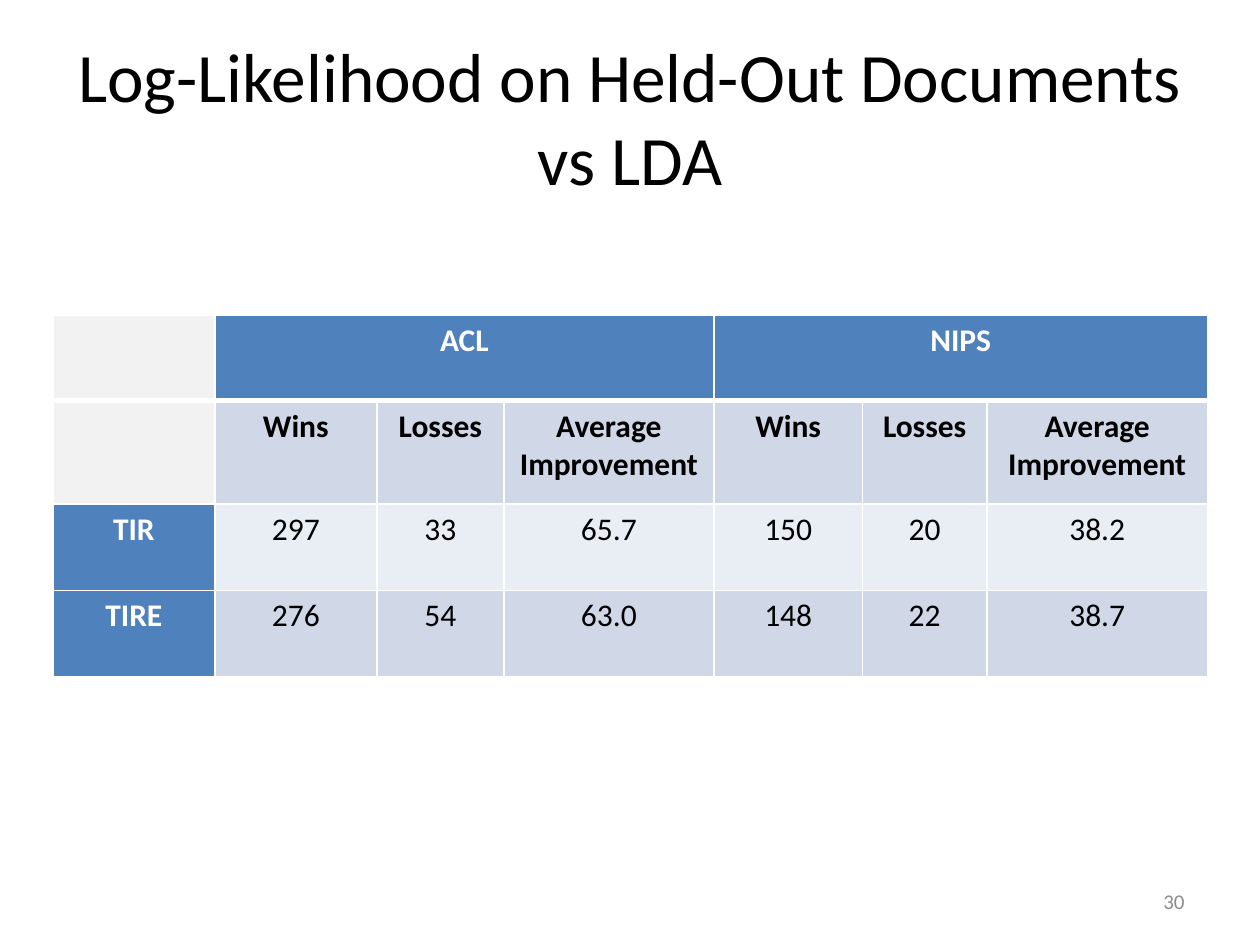
from lxml.etree import SubElement
from pptx import Presentation
from pptx.dml.color import RGBColor
from pptx.enum.text import MSO_ANCHOR as Anchor, PP_ALIGN as Align
from pptx.oxml.ns import qn
from pptx.util import Pt

BLACK, WHITE, GREY = "000000", "FFFFFF", "8C8C8C"
BLUE, BLANK, DARK_BAND, LIGHT_BAND = "4F81BD", "F2F2F2", "D0D8E8", "E9EDF4"

COLUMN_WIDTHS = [92.6, 92.6, 72.6, 120, 85, 71, 126.2]
ROW_HEIGHTS = [49, 59, 49.5, 49.5]
MEASURES = ["Wins", "Losses", "Average\nImprovement"]
RESULTS = [
    ["", "ACL", "", "", "NIPS", "", ""],
    ["", *MEASURES, *MEASURES],
    ["TIR", "297", "33", "65.7", "150", "20", "38.2"],
    ["TIRE", "276", "54", "63.0", "148", "22", "38.7"],
]


def rgb(color):
    return RGBColor.from_string(color)


def write(frame, text, size, color, align=Align.CENTER, bold=False):
    frame.text = text
    for paragraph in frame.paragraphs:
        paragraph.alignment = align
        font = paragraph.font
        font.name, font.size, font.bold = "Calibri", Pt(size), bold
        font.color.rgb = rgb(color)


def add_border(cell, side, width):
    line = SubElement(cell._tc.get_or_add_tcPr(), qn(f"a:ln{side}"), w=str(Pt(width)))
    fill = SubElement(line, qn("a:solidFill"))
    SubElement(fill, qn("a:srgbClr"), val=WHITE)


def cell_style(row, column):
    if column == 0 and row < 2:
        return BLANK, BLACK, False
    if column == 0 or row == 0:
        return BLUE, WHITE, True
    return (LIGHT_BAND if row == 2 else DARK_BAND), BLACK, row == 1


def add_results_table(slide):
    results = slide.shapes.add_table(
        len(ROW_HEIGHTS), len(COLUMN_WIDTHS),
        Pt(30.2), Pt(180), Pt(sum(COLUMN_WIDTHS)), Pt(sum(ROW_HEIGHTS)),
    ).table
    for column, width in zip(results.columns, COLUMN_WIDTHS):
        column.width = Pt(width)
    for row, height in zip(results.rows, ROW_HEIGHTS):
        row.height = Pt(height)
    for row, values in enumerate(RESULTS):
        for column, value in enumerate(values):
            cell = results.cell(row, column)
            fill, color, bold = cell_style(row, column)
            write(cell.text_frame, value, 18, color, bold=bold)
            for side in "LRTB":
                below_header = (row, side) in [(0, "B"), (1, "T")]
                add_border(cell, side, 3 if below_header else 1)
            cell.fill.solid()
            cell.fill.fore_color.rgb = rgb(fill)
    for first in (1, 4):
        results.cell(0, first).merge(results.cell(0, first + 2))


def set_title(slide, text):
    title = slide.shapes.title
    title.left, title.top, title.width, title.height = Pt(36), Pt(21.6), Pt(648), Pt(90)
    title.text_frame.vertical_anchor = Anchor.MIDDLE
    write(title.text_frame, text, 39.6, BLACK)


def add_page_number(slide, number):
    page = slide.shapes.add_textbox(Pt(516), Pt(500.4), Pt(168), Pt(28.8)).text_frame
    page.word_wrap = True
    page.vertical_anchor = Anchor.MIDDLE
    write(page, number, 12, GREY, Align.RIGHT)


def main():
    deck = Presentation()
    deck.slide_width, deck.slide_height = Pt(720), Pt(540)
    slide = deck.slides.add_slide(deck.slide_layouts[5])
    set_title(slide, "Log-Likelihood on Held-Out Documents vs LDA")
    add_results_table(slide)
    add_page_number(slide, "30")
    deck.save("out.pptx")


if __name__ == "__main__":
    main()
